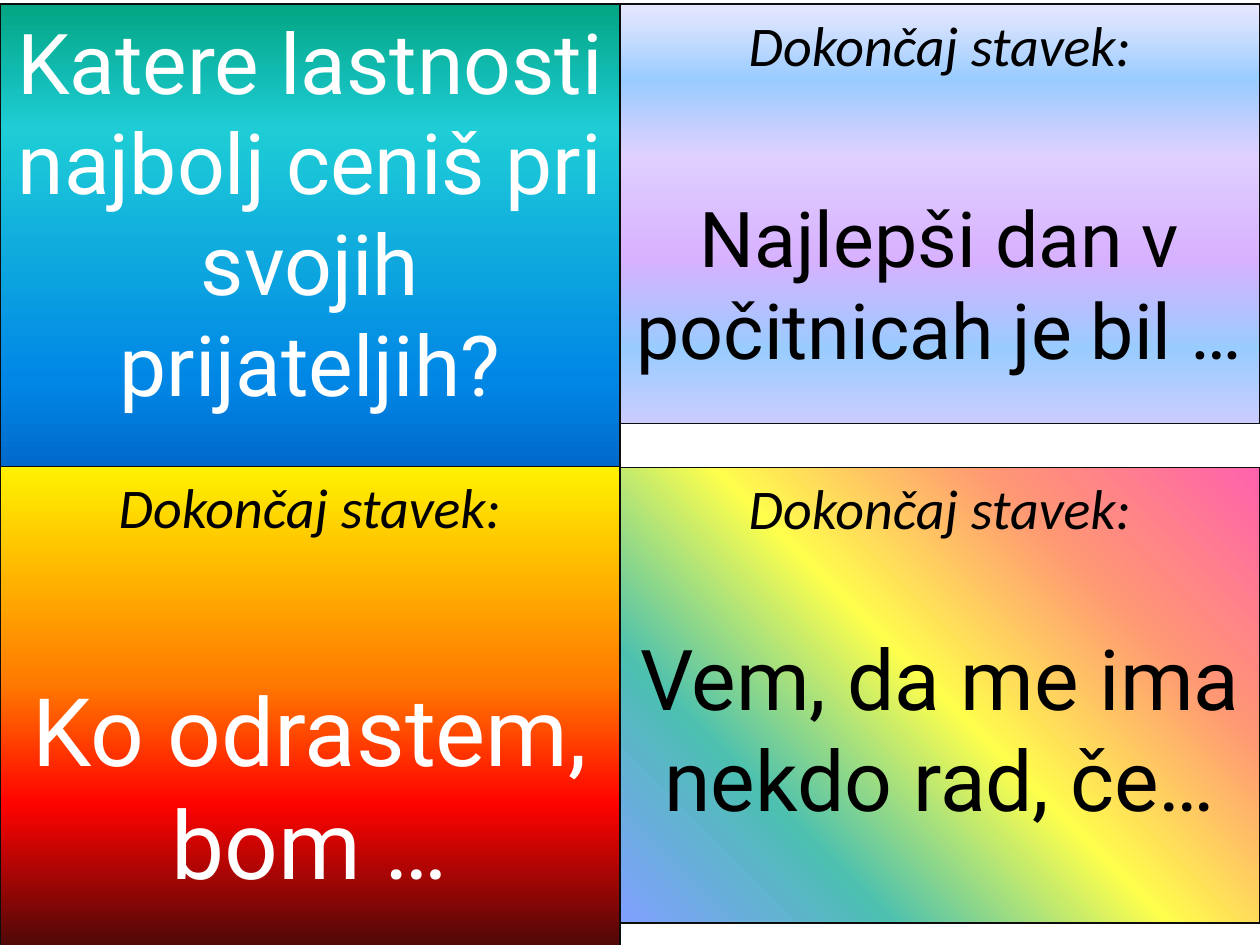
from dataclasses import dataclass

from lxml.etree import SubElement
from pptx import Presentation
from pptx.dml.color import RGBColor
from pptx.enum.shapes import MSO_SHAPE
from pptx.enum.text import MSO_ANCHOR, MSO_AUTO_SIZE, PP_ALIGN
from pptx.oxml.ns import qn
from pptx.util import Cm, Pt

LEFT_WIDTH = 12.5
RIGHT_WIDTH = 25.4 - LEFT_WIDTH
FRAME_FORMAT = {
    "word_wrap": True,
    "vertical_anchor": MSO_ANCHOR.TOP,
    "auto_size": MSO_AUTO_SIZE.SHAPE_TO_FIT_TEXT,
}


@dataclass(frozen=True)
class Stop:
    position: int
    color: str
    opacity: int = 100


@dataclass(frozen=True)
class Line:
    text: str
    size: int
    color: str = "000000"
    font: str = "Roboto"
    italic: bool = False
    gap: float = 0


@dataclass(frozen=True)
class Card:
    left: float
    top: float
    width: float
    height: float
    stops: list[Stop]
    lines: list[Line]
    angle: int = 90


PROMPT = Line("Dokončaj stavek:", 32, font="Calibri", italic=True)

CARDS = [
    Card(0, 0.08, LEFT_WIDTH, 10.08,
         [Stop(0, "02A583"), Stop(25, "1ECDD6"), Stop(75, "0087E6"), Stop(100, "005CBF")],
         [Line("Katere lastnosti najbolj ceniš pri svojih prijateljih?", 48, "FFFFFF")]),
    Card(LEFT_WIDTH, 0.08, RIGHT_WIDTH, 8.46,
         [Stop(0, "E4E4FF", 82), Stop(18, "99CCFF"), Stop(36, "DDCDFF", 92),
          Stop(61, "D8B1FF"), Stop(82, "99CCFF"), Stop(100, "CCCCFF")],
         [PROMPT, Line("Najlepši dan v počitnicah je bil …", 44, gap=64.5)]),
    Card(0, 9.4, LEFT_WIDTH, 9.7,
         [Stop(0, "FFF200"), Stop(45, "FF7A00"), Stop(70, "FF0300"), Stop(100, "4D0808")],
         [PROMPT, Line("Ko odrastem, bom …", 54, "FFFFFF", gap=75.5)]),
    Card(LEFT_WIDTH, 9.42, RIGHT_WIDTH, 9.19,
         [Stop(0, "FF3399", 77), Stop(25, "FF6633", 67), Stop(50, "FFFF00", 69),
          Stop(75, "01A78F", 70), Stop(100, "3366FF", 61)],
         [PROMPT, Line("Vem, da me ima nekdo rad, če…", 48, gap=49)],
         angle=135),
]


def rgb(color: str) -> RGBColor:
    return RGBColor.from_string(color)


def set_format(target, values: dict) -> None:
    for name, value in values.items():
        setattr(target, name, value)


def fill_gradient(shape, stops: list[Stop], angle: int) -> None:
    """Fill with any number of stops; the angle runs clockwise."""
    shape.fill.gradient()
    shape.fill.gradient_angle = 360 - angle
    stop_list = shape.fill._xPr.find(qn("a:gradFill")).find(qn("a:gsLst"))
    for old_stop in list(stop_list):
        stop_list.remove(old_stop)
    for stop in stops:
        entry = SubElement(stop_list, qn("a:gs"), pos=str(stop.position * 1000))
        color = SubElement(entry, qn("a:srgbClr"), val=stop.color)
        if stop.opacity < 100:
            SubElement(color, qn("a:alpha"), val=str(stop.opacity * 1000))


def write_line(para, line: Line) -> None:
    set_format(para, {"alignment": PP_ALIGN.CENTER, "space_before": Pt(line.gap)})
    span = para.add_run()
    span.text = line.text
    set_format(span.font, {"name": line.font, "size": Pt(line.size), "italic": line.italic})
    span.font.color.rgb = rgb(line.color)


def draw_card(page, card: Card) -> None:
    box = page.shapes.add_shape(
        MSO_SHAPE.RECTANGLE,
        Cm(card.left), Cm(card.top), Cm(card.width), Cm(card.height))
    box.shadow.inherit = False
    fill_gradient(box, card.stops, card.angle)
    box.line.color.rgb = rgb("0D0D0D")
    box.line.width = Pt(0.75)

    frame = box.text_frame
    set_format(frame, FRAME_FORMAT)
    for index, line in enumerate(card.lines):
        para = frame.add_paragraph() if index else frame.paragraphs[0]
        write_line(para, line)


def main() -> None:
    # Slide
    deck = Presentation()
    deck.slide_width, deck.slide_height = Cm(25.4), Cm(19.05)
    page = deck.slides.add_slide(deck.slide_layouts[6])

    # Four question cards, from back to front
    for card in CARDS:
        draw_card(page, card)

    deck.save("out.pptx")


if __name__ == "__main__":
    main()
